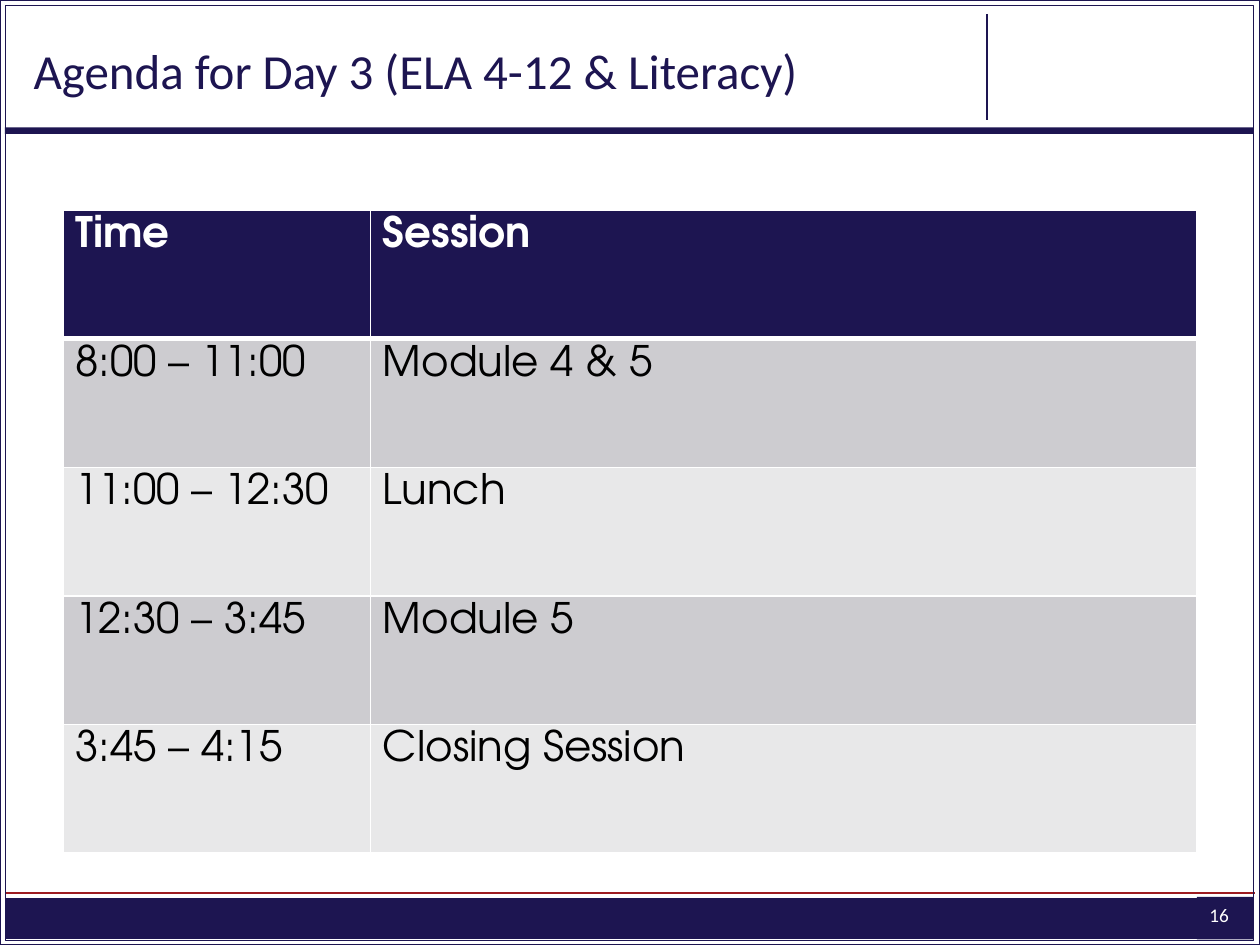
from lxml.etree import SubElement
from pptx import Presentation
from pptx.dml.color import RGBColor
from pptx.enum.shapes import MSO_CONNECTOR as Connector, MSO_SHAPE as Shape
from pptx.enum.text import MSO_ANCHOR as Anchor, PP_ALIGN as Align
from pptx.oxml.ns import qn
from pptx.util import Cm, Pt

NAVY, RED, WHITE, BLACK = "1D1551", "9D1C21", "FFFFFF", "000000"
BANDS = ("CDCCD0", "E8E8E9")

TITLE = "Agenda for Day 3 (ELA 4-12 & Literacy)"
PAGE = "16"
AGENDA = [
    ("Time", "Session"),
    ("8:00 – 11:00", "Module 4 & 5"),
    ("11:00 – 12:30", "Lunch"),
    ("12:30 – 3:45", "Module 5"),
    ("3:45 – 4:15", "Closing Session"),
]
COLUMNS = (6.2, 16.66)
ROW_HEIGHT = 2.59

TITLE_FONT = {"name": "Calibri", "size": Pt(28)}
PAGE_FONT = {"name": "Calibri", "size": Pt(11)}
HEADER_FONT = {"name": "TeX Gyre Adventor", "size": Pt(24), "bold": True}
BODY_FONT = {**HEADER_FONT, "bold": False}
MARGINS = {"margin_left": Cm(0.25), "margin_right": Cm(0.25),
           "margin_top": Cm(0.13), "margin_bottom": Cm(0.13)}
NO_MARGINS = dict.fromkeys(MARGINS, 0)


def rgb(value):
    return RGBColor.from_string(value)


def apply(target, values):
    for name, value in values.items():
        setattr(target, name, value)


def write(frame, text, font, color):
    paragraph = frame.paragraphs[0]
    run = paragraph.add_run()
    run.text = text
    apply(run.font, font)
    run.font.color.rgb = rgb(color)
    return paragraph


def paint(part, color):
    part.fill.solid()
    part.fill.fore_color.rgb = rgb(color)


def add_box(place, fill=None, line=None, width=1):
    box = slide.shapes.add_shape(Shape.RECTANGLE, *map(Cm, place))
    box.shadow.inherit = False
    if fill:
        paint(box, fill)
    else:
        box.fill.background()
    if line:
        box.line.color.rgb = rgb(line)
        box.line.width = Pt(width)
    else:
        box.line.fill.background()
    return box


def add_rule(ends, color):
    rule = slide.shapes.add_connector(Connector.STRAIGHT, *map(Cm, ends))
    rule.line.color.rgb = rgb(color)
    rule.line.width = Pt(1)
    SubElement(rule._element.spPr, qn("a:effectLst"))


def add_grid(left, top, columns, rows):
    grid = slide.shapes.add_table(
        len(rows), len(columns), Cm(left), Cm(top),
        Cm(sum(columns)), Cm(sum(rows))).table
    for column, width in zip(grid.columns, columns):
        column.width = Cm(width)
    for row, height in zip(grid.rows, rows):
        row.height = Cm(height)
    return grid


def set_borders(cell, widths):
    properties = cell._tc.get_or_add_tcPr()
    for index, (side, width) in enumerate(widths.items()):
        line = properties.makeelement(qn(f"a:ln{side}"), {"w": str(Pt(width))})
        fill = SubElement(line, qn("a:solidFill"))
        SubElement(fill, qn("a:srgbClr"), val=WHITE)
        properties.insert(index, line)


deck = Presentation()
deck.slide_width, deck.slide_height = Cm(25.4), Cm(19.05)
slide = deck.slides.add_slide(deck.slide_layouts[6])

# Page frame and header bar
add_box((0, 0, 25.4, 19.05), line=NAVY)
add_box((0.1, 2.57, 25.17, 0.13), fill=NAVY)

# Footer band with the rule above it
band = add_grid(0.1, 18.08, (24.23,), (0.86,)).cell(0, 0)
apply(band, NO_MARGINS)
paint(band, NAVY)
add_rule((0.1, 18, 25.3, 18), RED)

# Inner frame and header divider
add_box((0.1, 0.1, 25.17, 18.85), line=NAVY, width=0.1)
add_rule((19.89, 0.28, 19.89, 2.41), NAVY)

# Page number
page = add_box((24.13, 18.08, 1.14, 0.86), fill=NAVY).text_frame
apply(page, {**MARGINS, "vertical_anchor": Anchor.TOP})
write(page, PAGE, PAGE_FONT, WHITE).alignment = Align.LEFT

# Title
title = slide.shapes.add_textbox(Cm(0.43), Cm(0.41), Cm(18.26), Cm(2)).text_frame
apply(title, {"word_wrap": True, "vertical_anchor": Anchor.MIDDLE})
write(title, TITLE, TITLE_FONT, NAVY)

# Agenda table
agenda = add_grid(1.27, 4.24, COLUMNS, [ROW_HEIGHT] * len(AGENDA))
for row, entry in enumerate(AGENDA):
    header = row == 0
    for column, text in enumerate(entry):
        cell = agenda.cell(row, column)
        apply(cell, MARGINS)
        paint(cell, NAVY if header else BANDS[(row - 1) % 2])
        write(cell.text_frame, text, HEADER_FONT if header else BODY_FONT,
              WHITE if header else BLACK)
        set_borders(cell, {"L": 1, "R": 1, "T": 3 if row == 1 else 1,
                           "B": 3 if header else 1})

deck.save("out.pptx")
